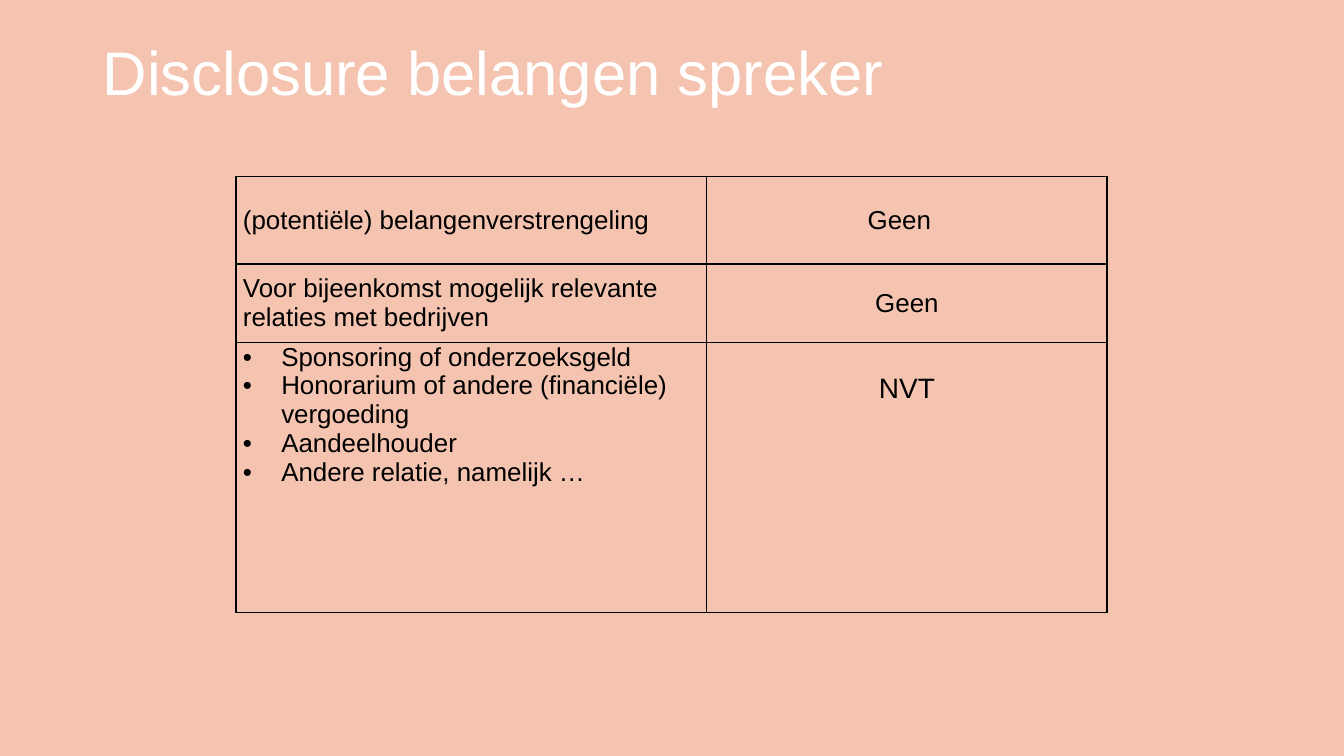
from lxml import etree
from pptx import Presentation
from pptx import util as u
from pptx.dml.color import RGBColor
from pptx.enum import text
from pptx.oxml import ns

COLOURS = {"background": "F5C4B0", "title": "FFFFFF", "ink": "000000"}
FONT = "Arial"
INDENT = u.Inches(0.38)
COLUMN_WIDTHS = [4.67, 3.97]
ROW_HEIGHTS = [0.87, 0.78, 2.68]

RELATIONS = [
    "Sponsoring of onderzoeksgeld",
    "Honorarium of andere (financiële) vergoeding",
    "Aandeelhouder",
    "Andere relatie, namelijk …",
]
CENTRED = {"align": text.PP_ALIGN.CENTER}
TOP = {"anchor": text.MSO_ANCHOR.TOP}
DISCLOSURES = [
    [(["(potentiële) belangenverstrengeling"], {}),
     (["Geen"], {**CENTRED, "right": 0.22})],
    [(["Voor bijeenkomst mogelijk relevante relaties met bedrijven"], {}),
     (["Geen"], CENTRED)],
    [(RELATIONS, {**TOP, "bullet": True}),
     (["NVT"], {**CENTRED, **TOP, "top": 0.3, "size": 20})],
]


def add_bullet(paragraph):
    properties = paragraph._p.get_or_add_pPr()
    properties.set("marL", str(INDENT))
    properties.set("indent", str(-INDENT))
    etree.SubElement(properties, ns.qn("a:buFont"), typeface=FONT)
    etree.SubElement(properties, ns.qn("a:buChar"), char="•")


def write_text(frame, lines, size=18.5, colour="ink", bullet=False,
               align=text.PP_ALIGN.LEFT, spacing=1.0):
    frame.word_wrap = True
    for index, line in enumerate(lines):
        paragraph = frame.add_paragraph() if index else frame.paragraphs[0]
        paragraph.alignment = align
        paragraph.line_spacing = spacing
        if bullet:
            add_bullet(paragraph)
        run = paragraph.add_run()
        run.text = line
        run.font.name = FONT
        run.font.size = u.Pt(size)
        run.font.color.rgb = RGBColor.from_string(COLOURS[colour])


def add_borders(cell):
    properties = cell._tc.get_or_add_tcPr()
    for position, side in enumerate(("lnL", "lnR", "lnT", "lnB")):
        border = etree.Element(ns.qn(f"a:{side}"), w=str(u.Pt(1)))
        fill = etree.SubElement(border, ns.qn("a:solidFill"))
        etree.SubElement(fill, ns.qn("a:srgbClr"), val=COLOURS["ink"])
        properties.insert(position, border)


def fill_cell(cell, lines, anchor=text.MSO_ANCHOR.MIDDLE, top=0, right=0.07,
              **text_format):
    cell.fill.background()
    add_borders(cell)
    cell.vertical_anchor = anchor
    cell.margin_left = u.Inches(0.07)
    cell.margin_right = u.Inches(right)
    cell.margin_top = u.Inches(top)
    cell.margin_bottom = 0
    write_text(cell.text_frame, lines, **text_format)


def add_title(slide, wording):
    title = slide.shapes.add_textbox(
        u.Inches(0.92), u.Inches(0.4), u.Inches(11.5), u.Inches(0.7))
    title.text_frame.vertical_anchor = text.MSO_ANCHOR.MIDDLE
    write_text(title.text_frame, [wording], size=44, colour="title", spacing=0.9)


def add_disclosures(slide):
    disclosures = slide.shapes.add_table(
        len(ROW_HEIGHTS), len(COLUMN_WIDTHS), u.Inches(2.34), u.Inches(1.75),
        u.Inches(sum(COLUMN_WIDTHS)), u.Inches(sum(ROW_HEIGHTS))).table
    disclosures.first_row = False
    disclosures.horz_banding = False
    for column, width in zip(disclosures.columns, COLUMN_WIDTHS):
        column.width = u.Inches(width)
    for row, height, entries in zip(disclosures.rows, ROW_HEIGHTS, DISCLOSURES):
        row.height = u.Inches(height)
        for cell, (lines, cell_format) in zip(row.cells, entries):
            fill_cell(cell, lines, **cell_format)


def main():
    deck = Presentation()
    deck.slide_width = u.Inches(13.33)
    deck.slide_height = u.Inches(7.5)
    slide = deck.slides.add_slide(deck.slide_layouts[6])

    # Background
    backdrop = slide.background.fill
    backdrop.solid()
    backdrop.fore_color.rgb = RGBColor.from_string(COLOURS["background"])

    # Title and table of interests
    add_disclosures(slide)
    add_title(slide, "Disclosure belangen spreker")
    deck.save("out.pptx")


if __name__ == "__main__":
    main()
